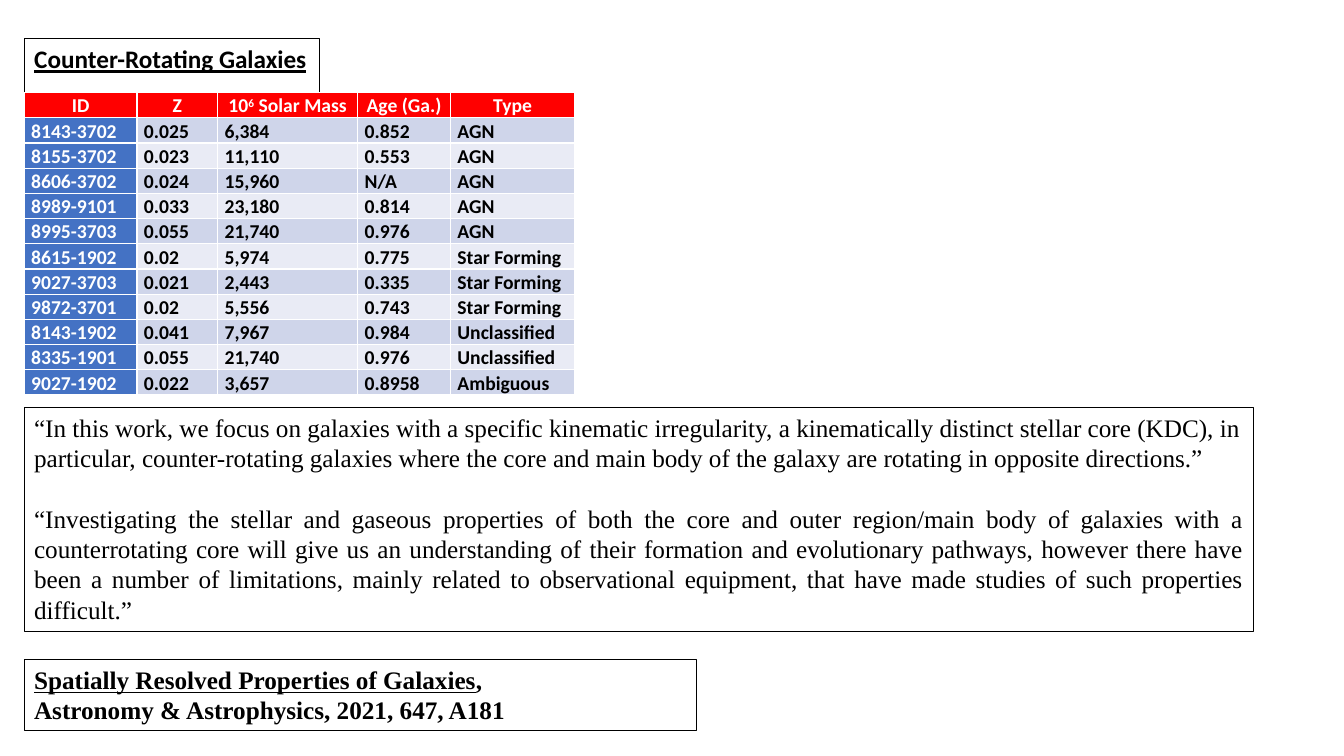
from dataclasses import dataclass

from pptx import Presentation
from pptx.dml.color import RGBColor
from pptx.enum.text import MSO_ANCHOR as Anchor, MSO_AUTO_SIZE as AutoSize, PP_ALIGN as Align
from pptx.shapes.base import BaseShape
from pptx.slide import Slide
from pptx.table import _Cell as Cell
from pptx.text.text import _Paragraph as Paragraph
from pptx.util import Pt

COLORS = {
    "black": "000000",
    "white": "FFFFFF",
    "header": "FF0000",
    "id": "4472C4",
    "odd": "CFD5EA",
    "even": "E9EBF5",
}
SANS, SERIF = "Calibri", "Times New Roman"
LEFT = 17.25


@dataclass
class Span:
    text: str
    font: str = SERIF
    size: float = 18
    color: str = "black"
    bold: bool = False
    underline: bool = False
    superscript: bool = False


@dataclass
class Line:
    spans: list[Span]
    align: Align = Align.JUSTIFY
    space_before: float = 0


@dataclass
class Box:
    top: float
    width: float
    height: float
    lines: list[Line]
    wrap: bool = True


HEADING = Box(27.4, 211, 28.8, [
    Line([Span("Counter-Rotating Galaxies", SANS, bold=True, underline=True)], Align.LEFT),
], wrap=False)

QUOTES = Box(291, 878.4, 159.8, [
    Line([Span("“In this work, we focus on galaxies with a specific kinematic irregularity, "
               "a kinematically distinct stellar core (KDC), in")]),
    Line([Span("particular, counter-rotating galaxies where the core and main body of the "
               "galaxy are rotating in opposite directions.”")]),
    Line([Span("“Investigating the stellar and gaseous properties of both the core and outer "
               "region/main body of galaxies with a counterrotating core will give us an "
               "understanding of their formation and evolutionary pathways, however there have "
               "been a number of limitations, mainly related to observational equipment, that "
               "have made studies of such properties difficult.”")], space_before=21.6),
])

REFERENCE = Box(470.9, 480.2, 51.1, [
    Line([Span("Spatially Resolved Properties of Galaxies", bold=True, underline=True),
          Span(", ", bold=True)]),
    Line([Span("Astronomy & Astrophysics, 2021, 647, A181", bold=True)]),
])

# Galaxy table: a header cell is a list of (text, superscript) pieces
TABLE_TOP, ROW_HEIGHT = 66.2, 17.1
COLUMN_WIDTHS = [80.6, 57.6, 100.1, 66.2, 88.9]
HEADERS = [
    [("ID", False)],
    [("Z", False)],
    [("10", False), ("6", True), (" Solar Mass", False)],
    [("Age (Ga.)", False)],
    [("Type", False)],
]
GALAXIES = [
    ("8143-3702", "0.025", "6,384", "0.852", "AGN"),
    ("8155-3702", "0.023", "11,110", "0.553", "AGN"),
    ("8606-3702", "0.024", "15,960", "N/A", "AGN"),
    ("8989-9101", "0.033", "23,180", "0.814", "AGN"),
    ("8995-3703", "0.055", "21,740", "0.976", "AGN"),
    ("8615-1902", "0.02", "5,974", "0.775", "Star Forming"),
    ("9027-3703", "0.021", "2,443", "0.335", "Star Forming"),
    ("9872-3701", "0.02", "5,556", "0.743", "Star Forming"),
    ("8143-1902", "0.041", "7,967", "0.984", "Unclassified"),
    ("8335-1901", "0.055", "21,740", "0.976", "Unclassified"),
    ("9027-1902", "0.022", "3,657", "0.8958", "Ambiguous"),
]


def rgb(name: str) -> RGBColor:
    return RGBColor.from_string(COLORS[name])


def write_line(para: Paragraph, line: Line) -> None:
    para.alignment = line.align
    para.space_before = Pt(line.space_before)
    for span in line.spans:
        run = para.add_run()
        run.text = span.text
        font = run.font
        font.name, font.size = span.font, Pt(span.size)
        font.bold, font.underline = span.bold, span.underline
        font.color.rgb = rgb(span.color)
        if span.superscript:
            run._r.get_or_add_rPr().set("baseline", "30000")


def format_box(shape: BaseShape, box: Box) -> None:
    shape.left, shape.top = Pt(LEFT), Pt(box.top)
    shape.width, shape.height = Pt(box.width), Pt(box.height)
    shape.line.color.rgb = rgb("black")
    shape.line.width = Pt(0.75)
    frame = shape.text_frame
    frame.word_wrap = box.wrap
    frame.auto_size = AutoSize.SHAPE_TO_FIT_TEXT
    frame.vertical_anchor = Anchor.TOP
    for index, line in enumerate(box.lines):
        write_line(frame.add_paragraph() if index else frame.paragraphs[0], line)


def fill_cell(cell: Cell, fill: str, line: Line) -> None:
    cell.fill.solid()
    cell.fill.fore_color.rgb = rgb(fill)
    cell.margin_left = cell.margin_right = Pt(5)
    cell.margin_top = cell.margin_bottom = Pt(0)
    cell.vertical_anchor = Anchor.BOTTOM
    para = cell.text_frame.paragraphs[0]
    para.line_spacing = 1.07
    write_line(para, line)


def add_galaxy_table(page: Slide) -> None:
    row_count = len(GALAXIES) + 1
    table = page.shapes.add_table(
        row_count, len(HEADERS), Pt(LEFT), Pt(TABLE_TOP),
        Pt(sum(COLUMN_WIDTHS)), Pt(ROW_HEIGHT * row_count)).table
    table.first_col = True
    for column, width in zip(table.columns, COLUMN_WIDTHS):
        column.width = Pt(width)
    for column, pieces in enumerate(HEADERS):
        spans = [Span(text, SANS, 14, "white", True, superscript=raised)
                 for text, raised in pieces]
        fill_cell(table.cell(0, column), "header", Line(spans, Align.CENTER))
    for row, galaxy in enumerate(GALAXIES, start=1):
        band = "odd" if row % 2 else "even"
        for column, value in enumerate(galaxy):
            fill, color = (band, "black") if column else ("id", "white")
            fill_cell(table.cell(row, column), fill,
                      Line([Span(value, SANS, 14, color, True)]))


def main() -> None:
    deck = Presentation()
    deck.slide_width, deck.slide_height = Pt(960), Pt(540)
    page = deck.slides.add_slide(deck.slide_layouts[5])

    # Heading
    title = page.shapes.title
    title.fill.solid()
    title.fill.fore_color.rgb = rgb("white")
    format_box(title, HEADING)

    # Reference, table and quotes
    for box in (REFERENCE, QUOTES):
        shape = page.shapes.add_textbox(Pt(LEFT), Pt(box.top), Pt(box.width), Pt(box.height))
        format_box(shape, box)
    add_galaxy_table(page)

    deck.save("out.pptx")


if __name__ == "__main__":
    main()
